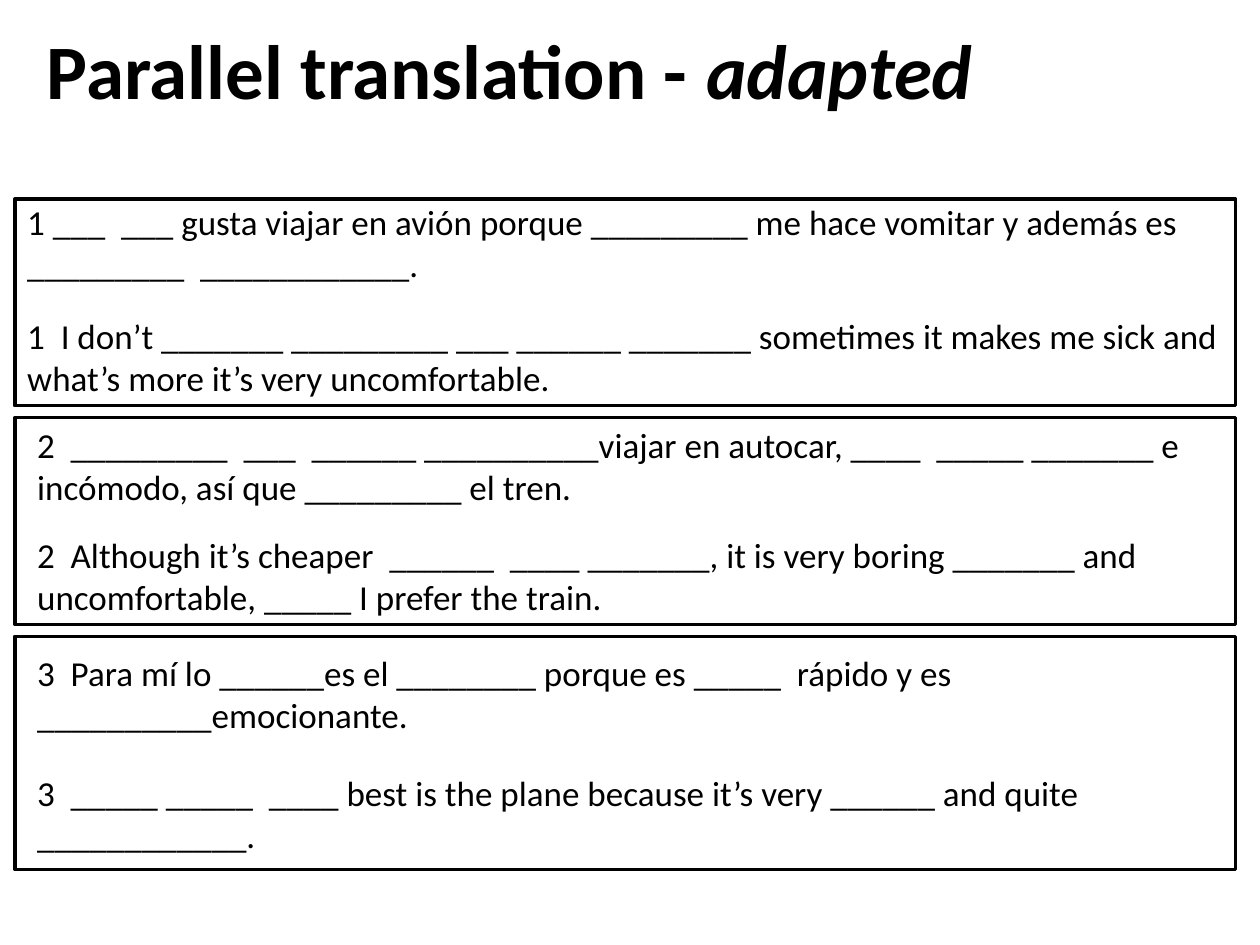
from pptx import Presentation
from pptx import util as u
from pptx.dml import color
from pptx.enum import shapes, text

INK = "000000"
LEFT, FRAME_WIDTH, GAP = 0.3, 24.61, 0.24
FIRST_TOP = 4.01
EXERCISES = [
    (4.17, 0, -0.1, 2.21,
     "1 ___  ___ gusta viajar en avión porque _________ me hace vomitar y además es _________  ____________.",
     "1  I don’t _______ _________ ___ ______ _______ sometimes it makes me sick and what’s more it’s very uncomfortable."),
    (4.17, 0.2, 0, 2.21,
     "2  _________  ___  ______ __________viajar en autocar, ____  _____ _______ e incómodo, así que _________ el tren.",
     "2  Although it’s cheaper  ______  ____ _______, it is very boring _______ and uncomfortable, _____ I prefer the train."),
    (4.7, 0.2, 0.18, 2.59,
     "3  Para mí lo ______es el ________ porque es _____  rápido y es __________emocionante.",
     "3  _____ _____  ____ best is the plane because it’s very ______ and quite ____________."),
]


def paint(target, hex_color):
    target.rgb = color.RGBColor.from_string(hex_color)


def add_line_of_text(slide, box, size, bold=False):
    frame = slide.shapes.add_textbox(*map(u.Cm, box)).text_frame
    frame.word_wrap = True
    frame.auto_size = text.MSO_AUTO_SIZE.SHAPE_TO_FIT_TEXT
    paragraph = frame.paragraphs[0]
    paragraph.font.name = "Calibri"
    paragraph.font.size = u.Pt(size)
    paragraph.font.bold = bold
    paint(paragraph.font.color, INK)
    return paragraph


def add_heading(slide, box):
    heading = add_line_of_text(slide, box, 44, bold=True)
    heading.add_run().text = "Parallel translation - "
    adapted = heading.add_run()
    adapted.text = "adapted"
    adapted.font.italic = True


def add_exercise(slide, box, indent, spanish_offset, english_offset, spanish, english):
    left, top, width, height = box
    for offset, sentence in ((spanish_offset, spanish), (english_offset, english)):
        line_box = (left + indent, top + offset, 25.4, 1.96)
        add_line_of_text(slide, line_box, 20).add_run().text = sentence
    border = slide.shapes.add_shape(shapes.MSO_SHAPE.RECTANGLE, *map(u.Cm, box))
    border.shadow.inherit = False
    border.fill.background()
    paint(border.line.color, INK)
    border.line.width = u.Pt(2)


def main():
    deck = Presentation()
    deck.slide_width, deck.slide_height = u.Cm(25.4), u.Cm(19.05)
    slide = deck.slides.add_slide(deck.slide_layouts[6])
    add_heading(slide, (0.69, 0.33, 22.6, 2.13))
    top = FIRST_TOP
    for height, *content in EXERCISES:
        add_exercise(slide, (LEFT, top, FRAME_WIDTH, height), *content)
        top += height + GAP
    deck.save("out.pptx")


if __name__ == "__main__":
    main()
